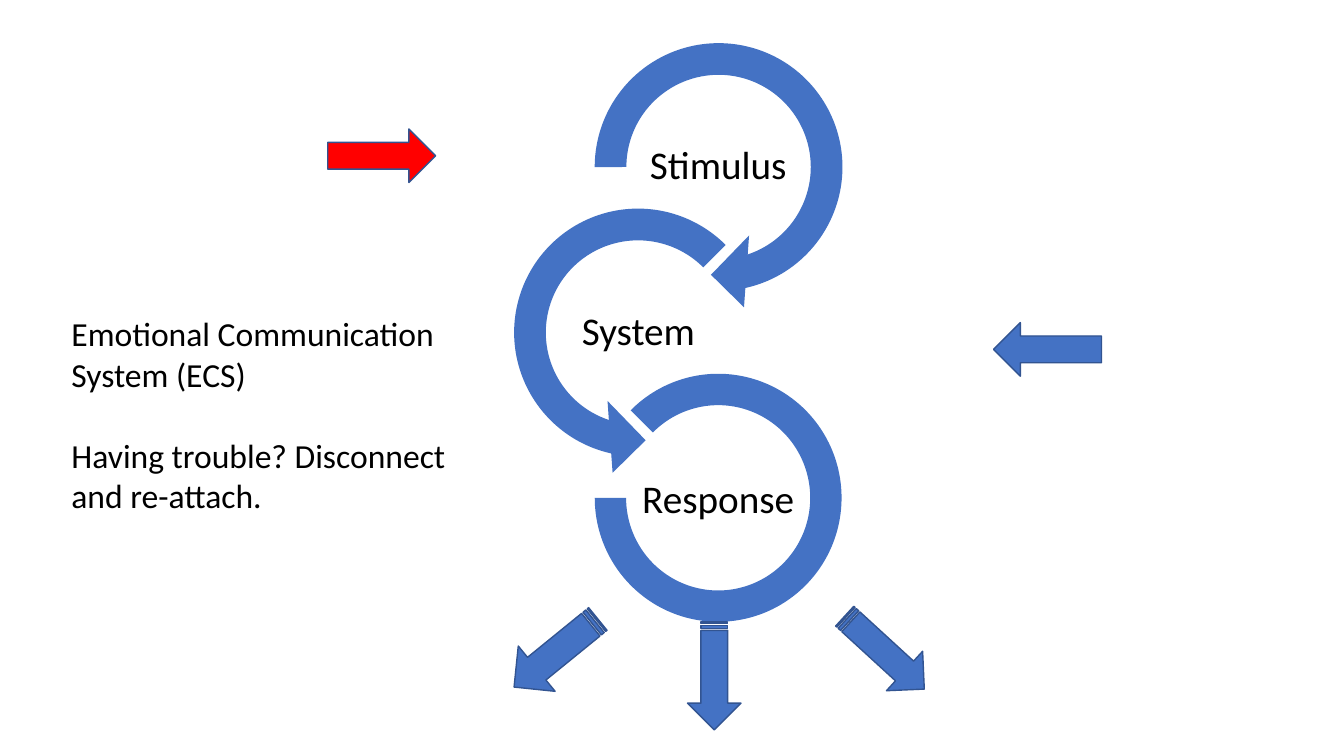
"""Build the stimulus, system and response slide."""
import pptx
import pptx.util
import pptx.dml.color
import pptx.enum.shapes
import pptx.enum.text

Cm = pptx.util.Cm
Pt = pptx.util.Pt
RGBColor = pptx.dml.color.RGBColor
Kind = pptx.enum.shapes.MSO_SHAPE
Align = pptx.enum.text.PP_ALIGN
Anchor = pptx.enum.text.MSO_ANCHOR
Fit = pptx.enum.text.MSO_AUTO_SIZE

BLUE = RGBColor(0x44, 0x72, 0xC4)
EDGE = RGBColor(0x32, 0x54, 0x91)
RED = RGBColor(0xFF, 0x00, 0x00)
BLACK = RGBColor(0x00, 0x00, 0x00)

deck = pptx.Presentation()
deck.slide_width = Cm(33.87)
deck.slide_height = Cm(19.05)
slide = deck.slides.add_slide(deck.slide_layouts[6])


def draw(kind, box, fill):
    shape = slide.shapes.add_shape(kind, *map(Cm, box))
    shape.shadow.inherit = False
    shape.fill.solid()
    shape.fill.fore_color.rgb = fill
    return shape


def write(box, lines, size, frame, para):
    text = slide.shapes.add_textbox(*map(Cm, box)).text_frame
    text.text = "\n".join(lines)
    for key, value in frame.items():
        setattr(text, key, value)
    for item in text.paragraphs:
        for key, value in para.items():
            setattr(item, key, value)
        for run in item.runs:
            run.font.name = "Calibri"
            run.font.size = Pt(size)
            run.font.color.rgb = BLACK
    return text


inset = Cm(0.05)
label = {"word_wrap": True, "vertical_anchor": Anchor.MIDDLE,
         "margin_left": inset, "margin_right": inset,
         "margin_top": inset, "margin_bottom": inset}
center = {"alignment": Align.CENTER, "line_spacing": 0.9}

stages = [
    ("Stimulus", Kind.CIRCULAR_ARROW, (14.48, 0.58, 7.26, 7.26),
     (0.11, 11.42, 45, 108, 0.125), (16.08, 3.2)),
    ("System", Kind.LEFT_CIRCULAR_ARROW, (12.45, 4.75, 7.26, 7.26),
     (0.11, 11.42, 63, 189, 0.125), (14.07, 7.39)),
    ("Response", Kind.BLOCK_ARC, (14.99, 9.42, 6.22, 6.25),
     (135, 108, 0.127), (16.08, 11.61)),
]
for name, kind, box, bends, spot in stages:
    ring = draw(kind, box, BLUE)
    ring.line.fill.background()
    for index, bend in enumerate(bends):
        ring.adjustments[index] = bend
    write((*spot, 4.04, 2.01), [name], 28, label, center)

arrows = [
    (Kind.RIGHT_ARROW, 8.26, 3.25, 1.35, 0, RED),
    (Kind.LEFT_ARROW, 25.04, 8.13, 1.35, 0, BLUE),
    (Kind.STRIPED_RIGHT_ARROW, 16.64, 16.36, 1.35, 90, BLUE),
    (Kind.STRIPED_RIGHT_ARROW, 12.65, 15.72, 1.47, 140.9, BLUE),
    (Kind.STRIPED_RIGHT_ARROW, 20.93, 15.77, 1.35, 42.5, BLUE),
]
for kind, left, top, height, turn, fill in arrows:
    arrow = draw(kind, (left, top, 2.72, height), fill)
    arrow.rotation = turn
    arrow.line.color.rgb = EDGE
    arrow.line.width = Pt(1)

notice = write(
    (1.55, 7.77, 10.92, 6.4),
    ["Emotional Communication System (ECS)",
     "Having trouble? Disconnect and re-attach."],
    24, {"word_wrap": True, "auto_size": Fit.SHAPE_TO_FIT_TEXT},
    {"alignment": Align.LEFT})
notice.paragraphs[1].space_before = Pt(29)

deck.save("out.pptx")
